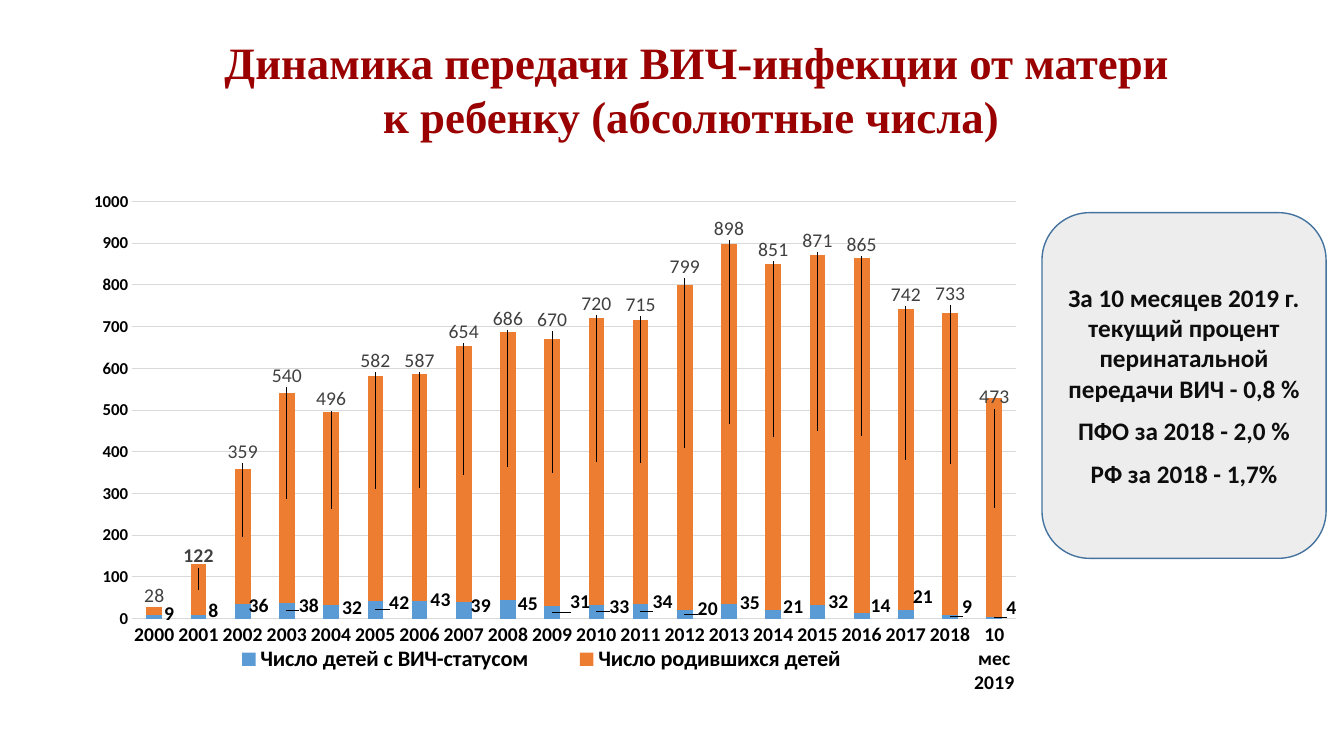
from lxml import etree
from pptx import Presentation
from pptx.chart.data import CategoryChartData
from pptx.dml.color import RGBColor
from pptx.enum.chart import XL_CHART_TYPE, XL_LABEL_POSITION, XL_LEGEND_POSITION, XL_TICK_MARK
from pptx.enum.shapes import MSO_SHAPE
from pptx.enum.text import MSO_ANCHOR, PP_ALIGN
from pptx.oxml.ns import qn
from pptx.util import Cm, Pt


def style(font, size, color, bold=True, name="Calibri"):
    font.size, font.bold, font.name = Pt(size), bold, name
    font.color.rgb = RGBColor.from_string(color)


def place(parent, index, **values):
    for old in parent.findall(qn("c:layout")):
        parent.remove(old)
    layout = etree.Element(qn("c:layout"))
    manual = etree.SubElement(layout, qn("c:manualLayout"))
    for key, value in values.items():
        etree.SubElement(manual, qn("c:" + key)).set("val", str(value))
    parent.insert(index, layout)


deck = Presentation()
deck.slide_width, deck.slide_height = Cm(33.87), Cm(19.05)
slide = deck.slides.add_slide(deck.slide_layouts[6])

years = [str(year) for year in range(2000, 2019)] + ["10 мес 2019"]
cases = [9, 8, 36, 38, 32, 42, 43, 39, 45, 31, 33, 34, 20, 35, 21, 32, 14, 21, 9, 4]
births = [19, 122, 323, 502, 464, 540, 544, 615, 641, 639,
          687, 681, 779, 863, 830, 839, 850, 721, 724, 525]
totals = [28, 122, 359, 540, 496, 582, 587, 654, 686, 670,
          720, 715, 799, 898, 851, 871, 865, 742, 733, 473]
shifts = [15, 15, 16, 22, 21, 24, 21, 17, 20, 28, 23, 22, 23, 21, 20, 21, 19, 17, 17, 17]
lows = [12, 19, 31, 31, 26, 38, 46, 31, 36, 41, 29, 41, 24, 38, 29, 41, 31, 53, 29, 26]
highs = [55, 150, 400, 582, 526, 618, 618, 688, 719, 716,
         755, 752, 844, 935, 885, 906, 897, 776, 779, 531]

data = CategoryChartData()
data.categories = years
data.add_series("Число детей с ВИЧ-статусом", cases)
data.add_series("Число родившихся детей", births)
chart = slide.shapes.add_chart(
    XL_CHART_TYPE.COLUMN_STACKED, Cm(1.91), Cm(3.71), Cm(23.72), Cm(13.79), data).chart
chart.has_title = False
style(chart.font, 10, "000000", False)
plot = chart.plots[0]
plot.gap_width, plot.overlap, plot.vary_by_categories = 182, 100, False
area = chart.element.find(".//" + qn("c:plotArea"))
place(area, 0, layoutTarget="inner", xMode="edge", yMode="edge", x=0.06, y=0.1, w=0.94, h=0.77)

for axis, size in (chart.category_axis, 14), (chart.value_axis, 12):
    axis.major_tick_mark = axis.minor_tick_mark = XL_TICK_MARK.NONE
    style(axis.tick_labels.font, size, "000000")
scale = chart.value_axis
scale.minimum_scale, scale.maximum_scale, scale.major_unit = 0, 1000, 100
scale.format.line.fill.background()
for line in chart.category_axis.format.line, scale.major_gridlines.format.line:
    line.color.rgb = RGBColor.from_string("D9D9D9")
    line.width = Pt(0.75)

chart.has_legend = True
legend = chart.legend
legend.position = XL_LEGEND_POSITION.BOTTOM
legend.include_in_layout = False
style(legend.font, 16, "000000")
place(chart.element.find(".//" + qn("c:legend")), 1,
      xMode="edge", yMode="edge", x=0.13, y=0.91, w=0.73, h=0.07)

bases = [0] * len(years)
groups = [("5B9BD5", "000000", cases, bases, lows, shifts),
          ("ED7D31", "404040", births, cases, highs, bases)]
for series, (fill, ink, values, floors, levels, moves) in zip(plot.series, groups):
    series.format.fill.solid()
    series.format.fill.fore_color.rgb = RGBColor.from_string(fill)
    series.data_labels.show_value = True
    style(series.data_labels.font, 14, ink)
    for i in range(len(years)):
        label = series.points[i].data_label
        if values is births and i != 1:
            run = label.text_frame.paragraphs[0].add_run()
            run.text = str(totals[i])
            style(run.font, 14, ink, False)
        else:
            style(label.font, 14, ink)
        label.position = XL_LABEL_POSITION.CENTER
    tags = series.data_labels._element.findall(qn("c:dLbl"))
    for tag, value, floor, level, move in zip(tags, values, floors, levels, moves):
        rise = (floor + value / 2 - level) / 1000 * 0.77
        place(tag, 1, x=round(move / 941, 4), y=round(rise, 4))

title = slide.shapes.add_textbox(Cm(5.26), Cm(0.74), Cm(24.61), Cm(2.97)).text_frame
title.word_wrap = True
title.vertical_anchor = MSO_ANCHOR.MIDDLE
para = title.paragraphs[0]
para.alignment = PP_ALIGN.CENTER
run = para.add_run()
run.text = "Динамика передачи ВИЧ-инфекции от матери к ребенку (абсолютные числа) "
style(run.font, 32, "9A0000", name="Times New Roman")

card = slide.shapes.add_shape(MSO_SHAPE.ROUNDED_RECTANGLE, Cm(26.26), Cm(5.36), Cm(7.16), Cm(8.71))
card.shadow.inherit = False
card.fill.solid()
card.fill.fore_color.rgb = RGBColor.from_string("EDEDED")
card.line.color.rgb = RGBColor.from_string("43739E")
card.line.width = Pt(1)
frame = card.text_frame
frame.word_wrap = True
frame.vertical_anchor = MSO_ANCHOR.MIDDLE
notes = ["За 10 месяцев 2019 г. текущий процент перинатальной передачи ВИЧ - 0,8 %",
         "ПФО за 2018 - 2,0 %", "РФ за 2018 - 1,7%"]
for i, note in enumerate(notes):
    para = frame.add_paragraph() if i else frame.paragraphs[0]
    para.alignment = PP_ALIGN.CENTER
    para.space_before = Pt(9)
    run = para.add_run()
    run.text = note
    style(run.font, 18, "0D0D0D")

deck.save("out.pptx")
